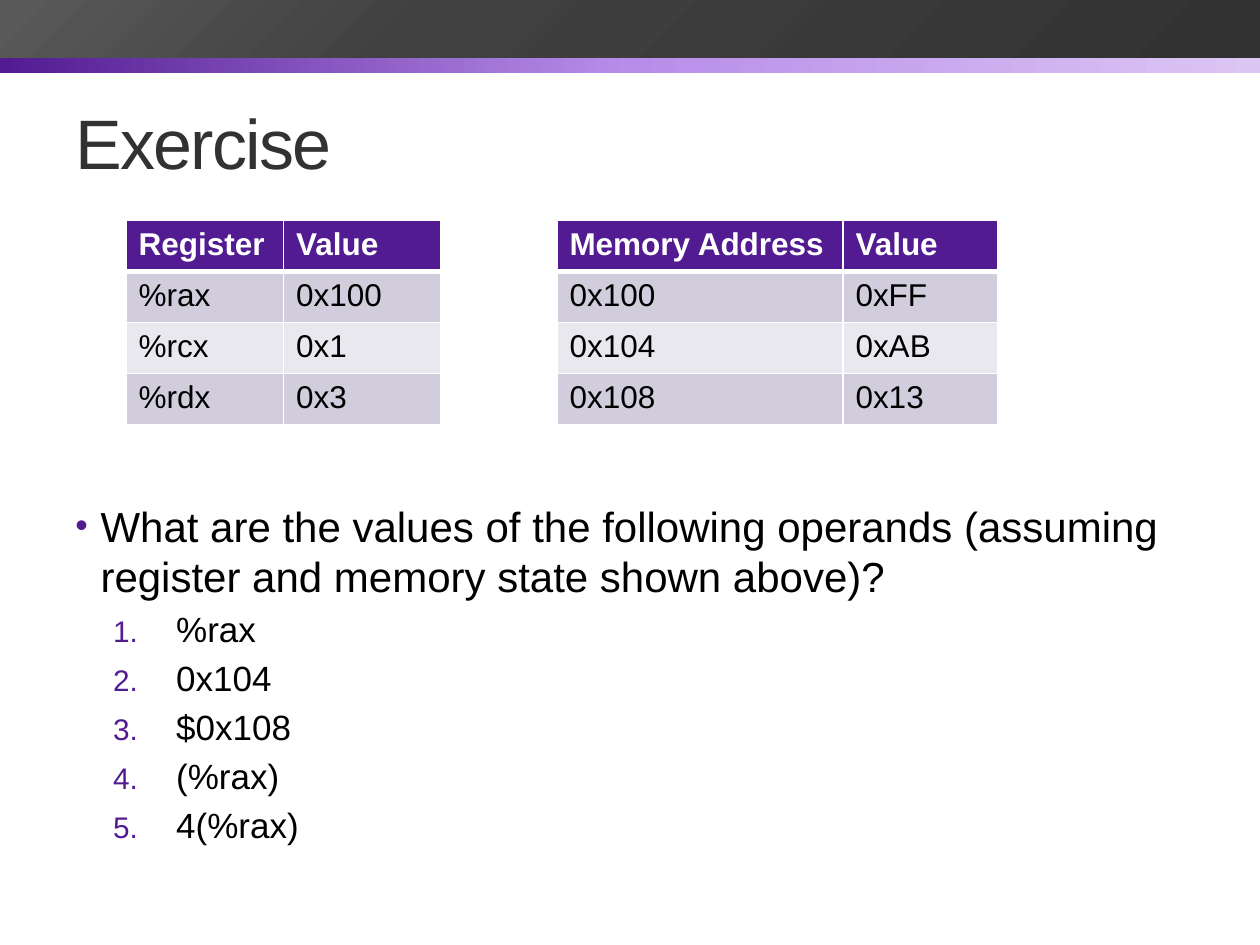
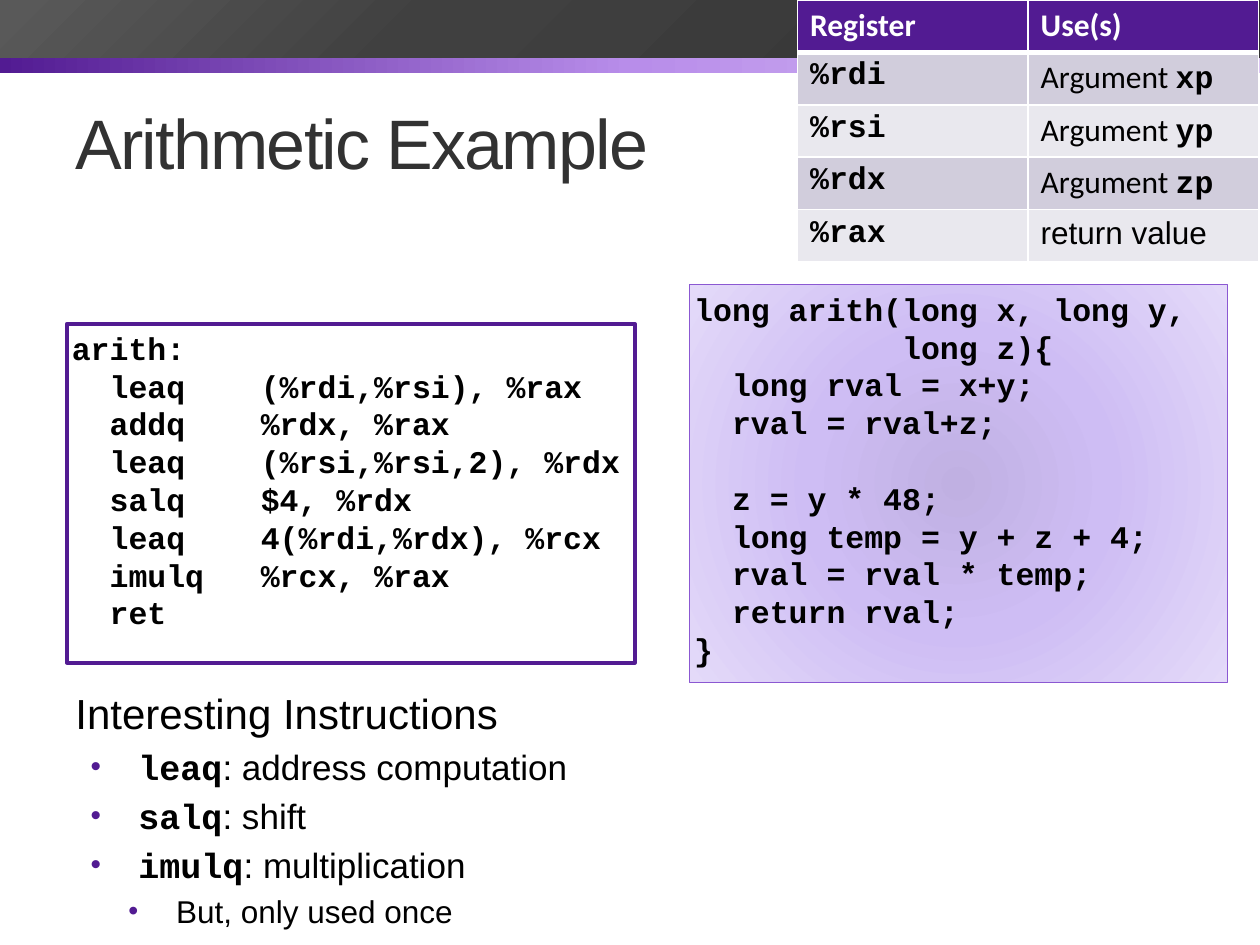
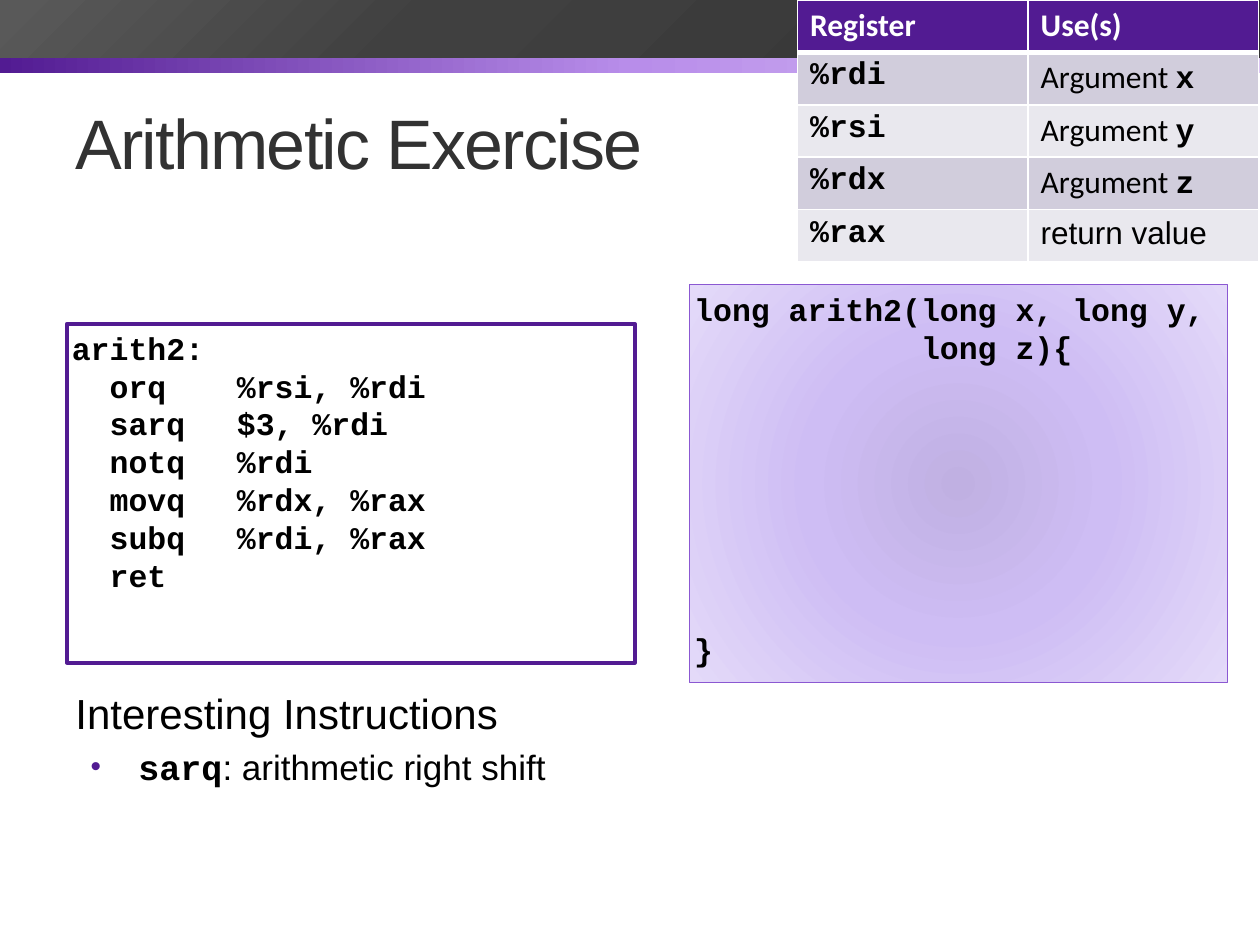
from dataclasses import dataclass

from pptx import Presentation
from pptx.dml.color import RGBColor
from pptx.enum.shapes import MSO_SHAPE
from pptx.enum.text import MSO_ANCHOR, PP_ALIGN
from pptx.oxml import parse_xml
from pptx.oxml.ns import nsdecls, qn
from pptx.shapes.autoshape import Shape
from pptx.slide import Slide
from pptx.util import Inches, Pt

COLORS = {
    "accent": "521B92",
    "title": "323232",
    "text": "000000",
    "white": "FFFFFF",
    "odd_row": "D1CDDC",
    "even_row": "E9E8EE",
    "code_line": "8B58D2",
}
PURPLE_BAND = [(0, "521B92"), (50, "B88DEA"), (100, "DCC6F4")]
DARK_BAND = [(0, "323232"), (66, "404040"), (99, "595959")]
CODE_GRADIENT = [(0, "C0B0E2"), (45, "CEBDF4"), (100, "E4DAF9")]
LINEAR = '<a:lin ang="{}" scaled="0"/>'
RADIAL = '<a:path path="circle"><a:fillToRect l="50000" t="50000" r="50000" b="50000"/></a:path>'

SANS, TABLE_SANS, MONO = "Arial", "Calibri", "Courier New"
LINE_HEIGHT = 1.2
CODE_SIZE = 18
CHARACTER = 0.15  # width in inches of one code character


@dataclass(frozen=True)
class Box:
    left: float
    top: float
    width: float
    height: float

    def lengths(self) -> tuple:
        return tuple(Inches(side) for side in (self.left, self.top, self.width, self.height))


@dataclass(frozen=True)
class Piece:
    text: str
    font: str = SANS
    bold: bool = False


@dataclass(frozen=True)
class Level:
    size: int
    margin: float = 0
    indent: float = 0
    bullet: str = ""
    bullet_size: int = 85
    depth: int = 0


@dataclass(frozen=True)
class Item:
    level: Level
    pieces: list[Piece]


@dataclass(frozen=True)
class CodeLine:
    text: str
    margin: float = 0
    indent: float = 0
    blank_lines_before: int = 0


DOT = '<a:buChar char="•"/>'
NUMBER = '<a:buAutoNum type="arabicPeriod"/>'
QUESTION = Level(24, 0.2, -0.2, DOT)
NUMBERED = Level(20, 0.8, -0.5, NUMBER, depth=1)
HEADING = Level(24)
POINT = Level(20, 0.5, -0.38, DOT, depth=1)
SUBPOINT = Level(18, 0.8, -0.38, DOT, 90, 2)

TITLE_BOX = Box(0.5, 0.58, 9, 1.08)
QUESTION_BOX = Box(0.5, 3.92, 9, 3.17)
NOTES_BOX = Box(0.5, 5.41, 4.82, 2.09)
ASSEMBLY_BOX = Box(0.53, 2.57, 4.51, 2.69)
C_BOX = Box(5.47, 2.26, 4.27, 3.16)


def rgb(name: str) -> RGBColor:
    return RGBColor.from_string(COLORS[name])


def format_run(run, size: int, font: str = SANS, color: str = "text", bold: bool = False) -> None:
    run.font.size = Pt(size)
    run.font.name = font
    run.font.bold = bold
    run.font.color.rgb = rgb(color)


def add_pieces(paragraph, pieces: list[Piece], size: int, color: str = "text") -> None:
    for piece in pieces:
        run = paragraph.add_run()
        run.text = piece.text
        format_run(run, size, piece.font, color, piece.bold)


def set_indent(paragraph, margin: float, indent: float) -> None:
    properties = paragraph._p.get_or_add_pPr()
    properties.set("marL", str(Inches(margin)))
    properties.set("indent", str(Inches(indent)))


def fill_gradient(shape: Shape, stops: list[tuple[int, str]], direction: str) -> None:
    stop_xml = "".join(
        f'<a:gs pos="{position * 1000}"><a:srgbClr val="{color}"/></a:gs>'
        for position, color in stops
    )
    gradient = parse_xml(
        f'<a:gradFill {nsdecls("a")} rotWithShape="1"><a:gsLst>{stop_xml}</a:gsLst>{direction}</a:gradFill>'
    )
    shape.fill.background()
    properties = shape._element.spPr
    properties.replace(properties.find(qn("a:noFill")), gradient)


def add_rectangle(slide: Slide, box: Box) -> Shape:
    shape = slide.shapes.add_shape(MSO_SHAPE.RECTANGLE, *box.lengths())
    shape.shadow.inherit = False
    return shape


def add_band(slide: Slide, box: Box, stops: list[tuple[int, str]], angle: int) -> None:
    band = add_rectangle(slide, box)
    fill_gradient(band, stops, LINEAR.format(angle * 60000))
    band.line.fill.background()


def add_titled_slide(presentation, title: str) -> Slide:
    slide = presentation.slides.add_slide(presentation.slide_layouts[6])
    add_band(slide, Box(0, 0.24, 10, 0.34), PURPLE_BAND, 0)
    add_band(slide, Box(0, 0, 10, 0.46), DARK_BAND, 225)
    text_frame = slide.shapes.add_textbox(*TITLE_BOX.lengths()).text_frame
    text_frame.word_wrap = True
    text_frame.vertical_anchor = MSO_ANCHOR.MIDDLE
    text_frame.text = title
    run = text_frame.paragraphs[0].runs[0]
    format_run(run, 40, color="title")
    run.font._element.set("spc", "-100")
    return slide


def add_list(slide: Slide, box: Box, items: list[Item]) -> None:
    text_frame = slide.shapes.add_textbox(*box.lengths()).text_frame
    text_frame.word_wrap = True
    for index, item in enumerate(items):
        paragraph = text_frame.add_paragraph() if index else text_frame.paragraphs[0]
        level = item.level
        paragraph.level = level.depth
        paragraph.line_spacing = Pt(level.size * LINE_HEIGHT)
        paragraph.space_before = Pt(level.size * 0.2 if index else 0)
        set_indent(paragraph, level.margin, level.indent)
        if level.bullet:
            properties = paragraph._p.get_or_add_pPr()
            for xml in (
                f'<a:buClr {nsdecls("a")}><a:srgbClr val="{COLORS["accent"]}"/></a:buClr>',
                f'<a:buSzPct {nsdecls("a")} val="{level.bullet_size * 1000}"/>',
                f'<a:buFont {nsdecls("a")} typeface="{SANS}"/>',
                level.bullet.replace(" ", f' {nsdecls("a")} ', 1),
            ):
                properties.append(parse_xml(xml))
        add_pieces(paragraph, item.pieces, level.size)


def set_borders(cell, bottom_width: float) -> None:
    properties = cell._tc.get_or_add_tcPr()
    widths = {"lnL": 1, "lnR": 1, "lnT": 1, "lnB": bottom_width}
    for position, (side, width) in enumerate(widths.items()):
        properties.insert(position, parse_xml(
            f'<a:{side} {nsdecls("a")} w="{Pt(width)}"><a:solidFill>'
            f'<a:srgbClr val="{COLORS["white"]}"/></a:solidFill></a:{side}>'
        ))


def add_value_table(slide: Slide, box: Box, column_widths: list[float],
                    rows: list[list[list[Piece]]]) -> None:
    table = slide.shapes.add_table(len(rows), len(column_widths), *box.lengths()).table
    for column, width in zip(table.columns, column_widths):
        column.width = Inches(width)
    for row_index, row in enumerate(rows):
        is_header = row_index == 0
        fill = "accent" if is_header else "odd_row" if row_index % 2 else "even_row"
        for column_index, pieces in enumerate(row):
            cell = table.cell(row_index, column_index)
            cell.fill.solid()
            cell.fill.fore_color.rgb = rgb(fill)
            set_borders(cell, 3 if is_header else 1)
            add_pieces(cell.text_frame.paragraphs[0], pieces, 18, "white" if is_header else "text")


def plain_rows(header: list[str], body: list[list[str]]) -> list[list[list[Piece]]]:
    return [[[Piece(text, bold=True)] for text in header]] + [
        [[Piece(text)] for text in row] for row in body
    ]


def add_register_uses(slide: Slide, arguments: list[str]) -> None:
    rows = [[[Piece(text, TABLE_SANS, True)] for text in ("Register", "Use(s)")]]
    for register, argument in zip(("%rdi", "%rsi", "%rdx"), arguments):
        rows.append([[Piece(register, MONO, True)],
                     [Piece("Argument ", TABLE_SANS), Piece(argument, MONO, True)]])
    rows.append([[Piece("%rax", MONO, True)], [Piece("return value")]])
    add_value_table(slide, Box(6.33, 0, 3.67, 2.08), [1.83, 1.83], rows)


def add_code(shape: Shape, lines: list[CodeLine]) -> None:
    text_frame = shape.text_frame
    text_frame.word_wrap = True
    text_frame.vertical_anchor = MSO_ANCHOR.TOP
    text_frame.margin_left = text_frame.margin_right = Inches(0.04)
    text_frame.margin_top = text_frame.margin_bottom = Inches(0.04)
    text_frame.text = "\n".join(line.text for line in lines)
    line_height = CODE_SIZE * LINE_HEIGHT
    for paragraph, line in zip(text_frame.paragraphs, lines):
        paragraph.alignment = PP_ALIGN.LEFT
        paragraph.line_spacing = Pt(line_height)
        paragraph.space_before = Pt(line.blank_lines_before * line_height)
        set_indent(paragraph, line.margin, line.indent)
        for run in paragraph.runs:
            format_run(run, CODE_SIZE, MONO, bold=True)


def add_assembly(slide: Slide, label: str, instructions: list[str], operand_at: float) -> None:
    """Show a label and its instructions, with the operands after each tab lined up."""
    shape = add_rectangle(slide, ASSEMBLY_BOX)
    shape.fill.solid()
    shape.fill.fore_color.rgb = rgb("white")
    shape.line.color.rgb = rgb("accent")
    shape.line.width = Pt(2.08)
    hanging = 2 * CHARACTER - operand_at
    add_code(shape, [CodeLine(label)] + [
        CodeLine(instruction, operand_at, hanging) for instruction in instructions
    ])


def add_c_function(slide: Slide, name: str, body: list[CodeLine], blanks_at_end: int = 0) -> None:
    shape = add_rectangle(slide, C_BOX)
    fill_gradient(shape, CODE_GRADIENT, RADIAL)
    shape.line.color.rgb = rgb("code_line")
    shape.line.width = Pt(0.75)
    opening = f"long {name}("
    add_code(shape, [
        CodeLine(f"{opening}long x, long y,"),
        CodeLine("long z){", len(opening) * CHARACTER),
        *body,
        CodeLine("}", blank_lines_before=blanks_at_end),
    ])


def statement(text: str, blank_lines_before: int = 0) -> CodeLine:
    return CodeLine(text, 2 * CHARACTER, blank_lines_before=blank_lines_before)


def instruction_notes(notes: dict[str, str]) -> list[Item]:
    return [Item(HEADING, [Piece("Interesting Instructions")])] + [
        Item(POINT, [Piece(name, MONO, True), Piece(f": {meaning}")])
        for name, meaning in notes.items()
    ]


def build_operand_exercise(presentation) -> None:
    slide = add_titled_slide(presentation, "Exercise")
    question = ("What are the values of the following operands "
                "(assuming register and memory state shown above)?")
    operands = ["%rax", "0x104", "$0x108", "(%rax)", "4(%rax)"]
    add_list(slide, QUESTION_BOX, [Item(QUESTION, [Piece(question)])] + [
        Item(NUMBERED, [Piece(operand)]) for operand in operands
    ])
    add_value_table(slide, Box(1, 1.75, 2.5, 1.62), [1.25, 1.25], plain_rows(
        ["Register", "Value"], [["%rax", "0x100"], ["%rcx", "0x1"], ["%rdx", "0x3"]]))
    add_value_table(slide, Box(4.42, 1.75, 3.5, 1.62), [2.27, 1.23], plain_rows(
        ["Memory Address", "Value"],
        [["0x100", "0xFF"], ["0x104", "0xAB"], ["0x108", "0x13"]]))


def build_arithmetic_example(presentation) -> None:
    slide = add_titled_slide(presentation, "Arithmetic Example")
    notes = instruction_notes({
        "leaq": "address computation", "salq": "shift", "imulq": "multiplication"})
    add_list(slide, NOTES_BOX, notes + [Item(SUBPOINT, [Piece("But, only used once")])])
    add_assembly(slide, "arith:", [
        "leaq\t(%rdi,%rsi), %rax",
        "addq\t%rdx, %rax",
        "leaq\t(%rsi,%rsi,2), %rdx",
        "salq\t$4, %rdx",
        "leaq\t4(%rdi,%rdx), %rcx",
        "imulq\t%rcx, %rax",
        "ret",
    ], 10 * CHARACTER)
    add_c_function(slide, "arith", [
        statement("long rval = x+y;"),
        statement("rval = rval+z;"),
        statement("z = y * 48;", 1),
        statement("long temp = y + z + 4;"),
        statement("rval = rval * temp;"),
        statement("return rval;"),
    ])
    add_register_uses(slide, ["xp", "yp", "zp"])


def build_arithmetic_exercise(presentation) -> None:
    slide = add_titled_slide(presentation, "Arithmetic Exercise")
    add_assembly(slide, "arith2:", [
        "orq\t%rsi, %rdi",
        "sarq\t$3, %rdi",
        "notq\t%rdi",
        "movq\t%rdx, %rax",
        "subq\t%rdi, %rax",
        "ret",
    ], 1.31)
    add_list(slide, NOTES_BOX, instruction_notes({"sarq": "arithmetic right shift"}))
    add_register_uses(slide, ["x", "y", "z"])
    add_c_function(slide, "arith2", [], blanks_at_end=7)


def main() -> None:
    presentation = Presentation()
    presentation.slide_width = Inches(10)
    presentation.slide_height = Inches(7.5)
    build_operand_exercise(presentation)
    build_arithmetic_example(presentation)
    build_arithmetic_exercise(presentation)
    presentation.save("out.pptx")


if __name__ == "__main__":
    main()
